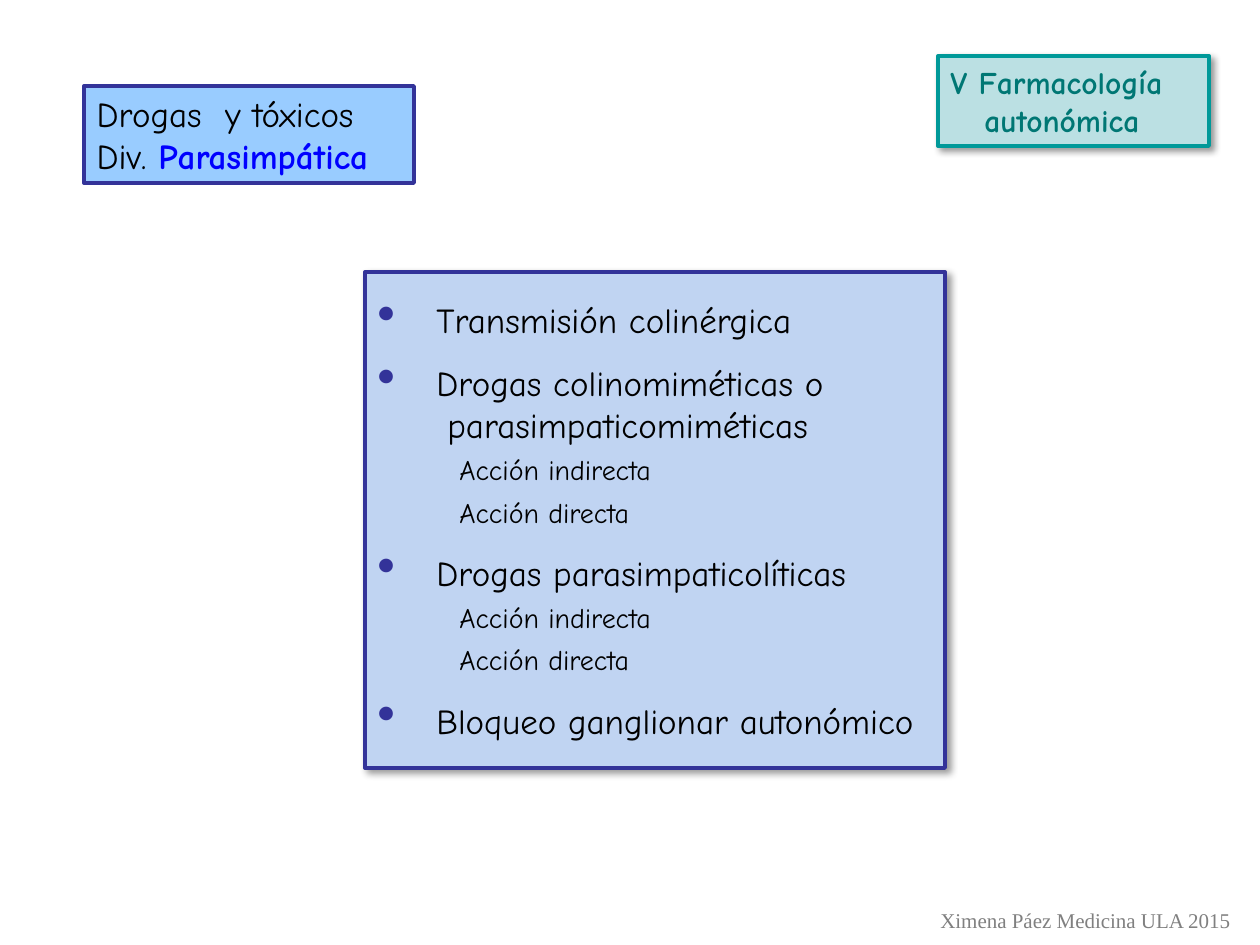
from lxml import etree
from pptx import Presentation
from pptx import util as u
from pptx.dml.color import RGBColor
from pptx.enum import shapes, text
from pptx.oxml.ns import qn

PX = u.Inches(1) / 126
COLORS = {
    "ink": "000000", "navy": "333399", "sky": "99CCFF", "pale": "C0D4F2",
    "blue": "0000FF", "teal": "009999", "mint": "BBE0E3", "deep": "007774",
    "gray": "808080",
}
COMIC = "Comic Neue"
HEAD = {"size": u.Pt(20), "name": COMIC}
SUB = {"size": u.Pt(16), "name": COMIC}
TAG = {"size": u.Pt(18), "name": COMIC, "bold": True}
FOOT = {"size": u.Pt(12), "name": "Times New Roman"}

# Kinds of outline entry: font, text indent in px, space before and after, bullet
KINDS = {
    "main": (HEAD, 59, 12, 0, True),
    "more": (HEAD, 70, 0, 0, False),
    "sub": (SUB, 82, 4, 1, False),
}
ACTIONS = [("sub", "Acción indirecta"), ("sub", "Acción directa")]
OUTLINE = [
    ("main", "Transmisión colinérgica"),
    ("main", "Drogas colinomiméticas o"),
    ("more", "parasimpaticomiméticas"),
    *ACTIONS,
    ("main", "Drogas parasimpaticolíticas"),
    *ACTIONS,
    ("main", "Bloqueo ganglionar autonómico"),
]


def px(n):
    return u.Emu(round(n * PX))


def rgb(key):
    return RGBColor.from_string(COLORS[key])


def put(obj, vals):
    for key, val in vals.items():
        setattr(obj, key, val)


def place(shape, left, top, width, height):
    put(shape, {"left": px(left), "top": px(top),
                "width": px(width), "height": px(height)})


def paint(shape, fill, line):
    shape.fill.solid()
    shape.fill.fore_color.rgb = rgb(fill)
    shape.line.color.rgb = rgb(line)
    shape.line.width = u.Pt(2.25)


def frame(shape, wrap=True):
    body = shape.text_frame
    put(body, {"word_wrap": wrap, "auto_size": text.MSO_AUTO_SIZE.NONE,
               "vertical_anchor": text.MSO_ANCHOR.MIDDLE,
               "margin_left": u.Inches(0.1), "margin_right": u.Inches(0.1),
               "margin_top": u.Inches(0.05), "margin_bottom": u.Inches(0.05)})
    return body


def line(body, first, runs, font, indent=0, **look):
    """Add a paragraph of (text, colour, bold) runs."""
    para = body.paragraphs[0] if first else body.add_paragraph()
    put(para, {"alignment": text.PP_ALIGN.LEFT, "line_spacing": 1.0,
               "space_before": u.Pt(0), "space_after": u.Pt(0), **look})
    para._p.get_or_add_pPr().set("marL", str(px(indent)))
    for words, color, bold in runs:
        run = para.add_run()
        run.text = words
        put(run.font, {**font, "bold": bold})
        run.font.color.rgb = rgb(color)
    return para


def bullet(para, indent):
    props = para._p.get_or_add_pPr()
    props.set("indent", str(-px(indent)))
    color = etree.SubElement(props, qn("a:buClr"))
    etree.SubElement(color, qn("a:srgbClr"), val=COLORS["navy"])
    etree.SubElement(props, qn("a:buSzPct"), val="150000")
    etree.SubElement(props, qn("a:buChar"), char="•")


def shade(shape):
    shape.shadow.inherit = False
    effects = shape._element.spPr.find(qn("a:effectLst"))
    drop = etree.SubElement(effects, qn("a:outerShdw"), blurRad=str(u.Pt(4)),
                            dist=str(u.Pt(3)), dir="2700000", algn="tl")
    color = etree.SubElement(drop, qn("a:srgbClr"), val=COLORS["ink"])
    etree.SubElement(color, qn("a:alpha"), val="40000")


def card(slide, box, fill, edge):
    shape = slide.shapes.add_shape(shapes.MSO_SHAPE.RECTANGLE, *map(px, box))
    paint(shape, fill, edge)
    shade(shape)
    return frame(shape)


def outline(slide):
    body = card(slide, (365, 272, 580, 496), "pale", "navy")
    for i, (kind, words) in enumerate(OUTLINE):
        font, indent, before, after, dot = KINDS[kind]
        para = line(body, i == 0, [(words, "ink", False)], font, indent,
                    space_before=u.Pt(before if i else 0),
                    space_after=u.Pt(after))
        if dot:
            bullet(para, indent)


def title(slide):
    shape = slide.shapes.title
    place(shape, 84, 86, 330, 97)
    paint(shape, "sky", "navy")
    body = frame(shape)
    line(body, True, [("Drogas  y tóxicos", "ink", False)], HEAD)
    line(body, False, [("Div. ", "ink", False),
                       ("Parasimpática", "blue", True)], HEAD)


def topic(slide):
    body = card(slide, (938, 56, 271, 90), "mint", "teal")
    line(body, True, [("V Farmacología", "deep", True)], TAG)
    line(body, False, [("autonómica", "deep", True)], TAG, 34)


def credit(slide):
    shape = slide.shapes.add_textbox(*map(px, (926, 901, 319, 38)))
    line(frame(shape, False), True,
         [("Ximena Páez Medicina ULA 2015", "gray", False)], FOOT,
         alignment=text.PP_ALIGN.CENTER)


def main():
    deck = Presentation()
    put(deck, {"slide_width": px(1260), "slide_height": px(945)})
    slide = deck.slides.add_slide(deck.slide_layouts[5])
    outline(slide)
    title(slide)
    topic(slide)
    credit(slide)
    deck.save("out.pptx")


if __name__ == "__main__":
    main()
